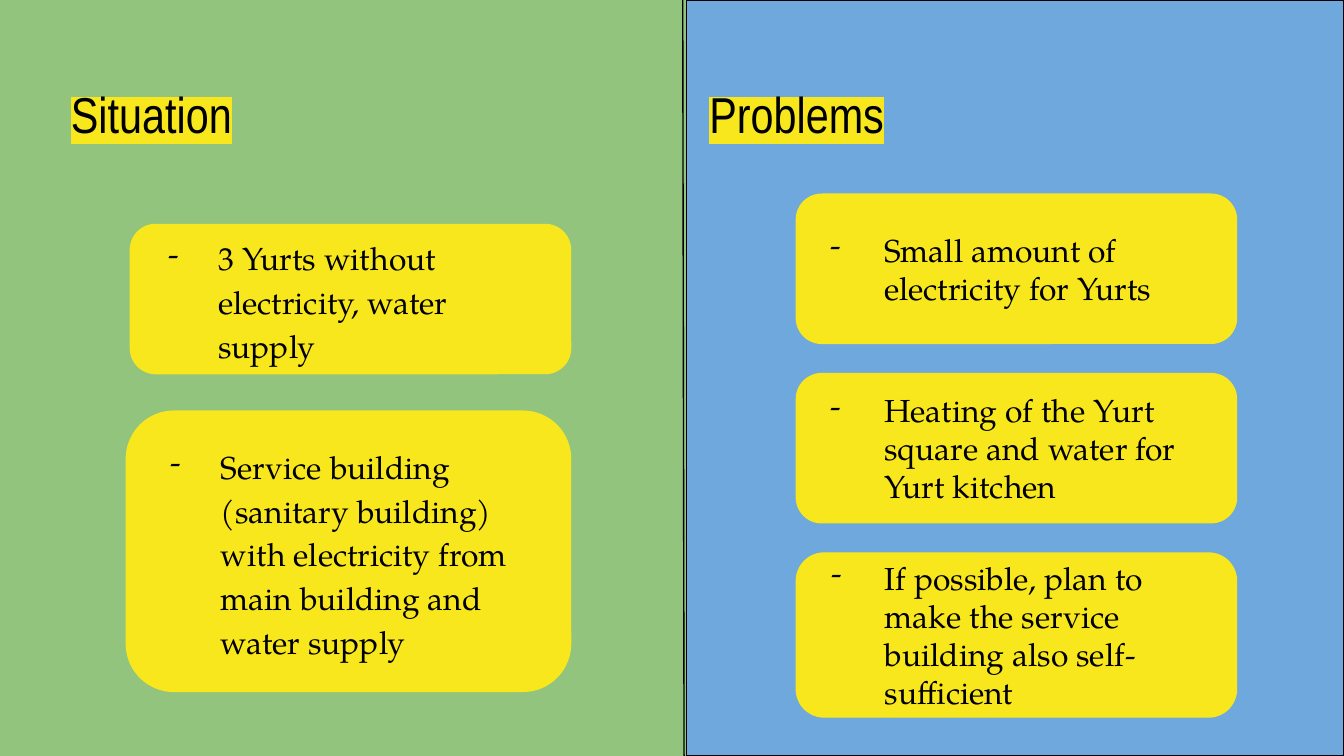
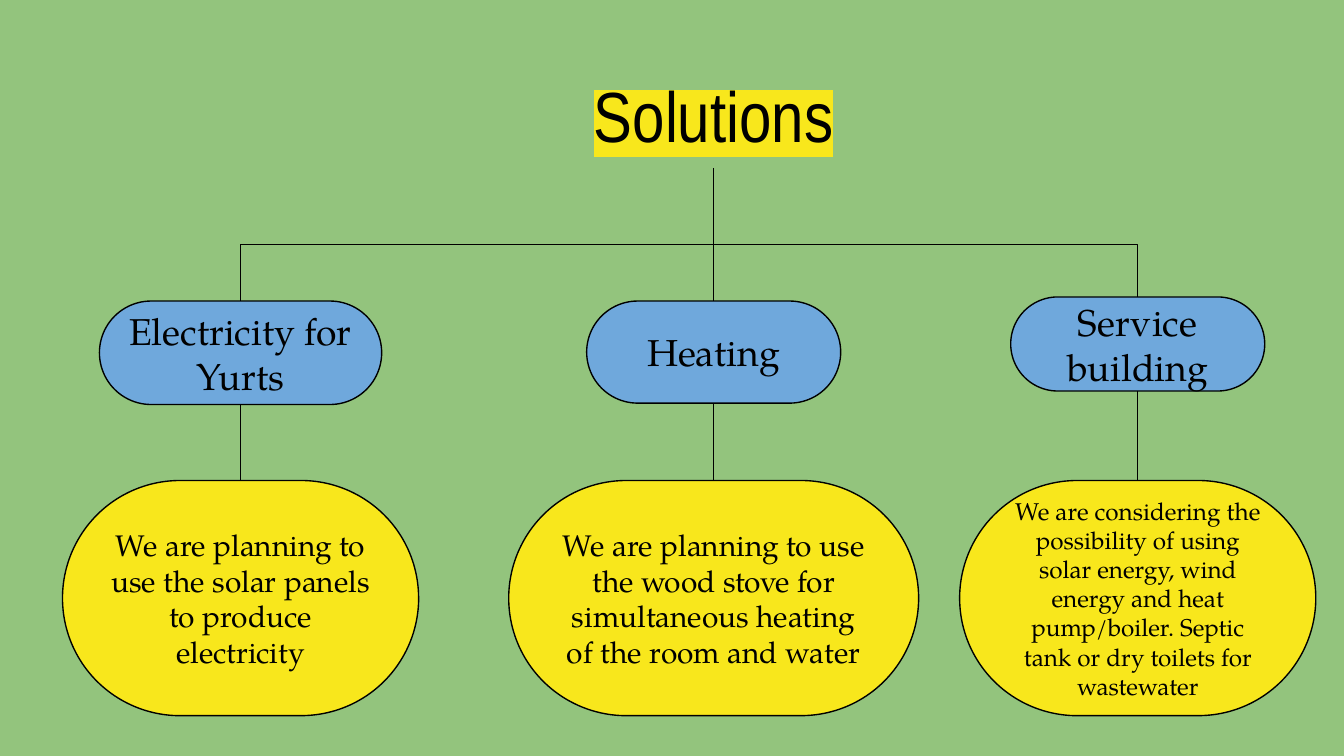
from lxml import etree
from pptx import Presentation
from pptx.dml.color import RGBColor
from pptx.enum.shapes import MSO_CONNECTOR, MSO_SHAPE
from pptx.enum.text import MSO_ANCHOR, PP_ALIGN
from pptx.oxml.ns import qn
from pptx.util import Pt

PX = 4572
W, H = 2000, 1125
GREEN = RGBColor(0x93, 0xC4, 0x7D)
BLUE = RGBColor(0x6F, 0xA8, 0xDC)
YELLOW = RGBColor(0xF8, 0xE7, 0x1C)
BLACK = RGBColor(0, 0, 0)
TITLE_FONT, BODY_FONT = "Arial Narrow", "TeX Gyre Pagella"
RECT, ROUND = MSO_SHAPE.RECTANGLE, MSO_SHAPE.ROUNDED_RECTANGLE
STRAIGHT, ELBOW = MSO_CONNECTOR.STRAIGHT, MSO_CONNECTOR.ELBOW
LEFT, CENTER = PP_ALIGN.LEFT, PP_ALIGN.CENTER
TOP, MIDDLE = MSO_ANCHOR.TOP, MSO_ANCHOR.MIDDLE


def emu(*lengths):
    return [n * PX for n in lengths]


def add_slide(prs):
    s = prs.slides.add_slide(prs.slide_layouts[6])
    s.background.fill.solid()
    s.background.fill.fore_color.rgb = GREEN
    return s


def add_text(sp, text, size, font, align, anchor):
    tf = sp.text_frame
    tf.word_wrap = True
    tf.vertical_anchor = anchor
    tf.margin_left = tf.margin_right = tf.margin_top = tf.margin_bottom = 20 * PX
    p = tf.paragraphs[0]
    p.alignment = align
    r = p.add_run()
    r.text = text
    r.font.size = Pt(size)
    r.font.color.rgb = BLACK
    r.font.name = font
    return p, r


def add_title(s, box, text, size, align=LEFT):
    sp = s.shapes.add_textbox(*emu(*box))
    p, r = add_text(sp, text, size, TITLE_FONT, align, TOP)
    highlight = etree.Element(qn("a:highlight"))
    etree.SubElement(highlight, qn("a:srgbClr"), val=str(YELLOW))
    r.font._element.find(qn("a:solidFill")).addnext(highlight)


def add_block(s, kind, box, fill, line, radius=None):
    sp = s.shapes.add_shape(kind, *emu(*box))
    sp.shadow.inherit = False
    sp.fill.solid()
    sp.fill.fore_color.rgb = fill
    sp.line.color.rgb = line
    sp.line.width = Pt(0.75)
    if radius:
        sp.adjustments[0] = radius
    return sp


def add_line(s, start, end, kind=STRAIGHT):
    c = s.shapes.add_connector(kind, *emu(*start, *end))
    c.line.color.rgb = BLACK
    c.line.width = Pt(0.75)
    spPr = c._element.spPr
    etree.SubElement(spPr, qn("a:effectLst"))
    if kind == ELBOW:
        spPr.find(qn("a:prstGeom")).set("prst", "bentConnector2")
    return c


def add_card(s, box, text, hanging, spacing):
    sp = add_block(s, ROUND, box, YELLOW, YELLOW, 0.17)
    p, r = add_text(sp, text, 17, BODY_FONT, LEFT, MIDDLE)
    p.line_spacing = spacing
    pPr = p._p.get_or_add_pPr()
    pPr.set("marL", str(100 * PX))
    pPr.set("indent", str(-hanging * PX))
    color = etree.SubElement(pPr, qn("a:buClr"))
    etree.SubElement(color, qn("a:srgbClr"), val=str(BLACK))
    etree.SubElement(pPr, qn("a:buFont"), typeface=BODY_FONT)
    etree.SubElement(pPr, qn("a:buChar"), char="-")


def add_panel(s, left, title_dx, title, cards, hanging, spacing):
    add_title(s, (left + title_dx, 104, 506, 130), title, 27)
    for dx, y, w, h, text in cards:
        add_card(s, (left + dx, y, w, h), text, hanging, spacing)


def situation_slide(prs):
    s = add_slide(prs)
    middle = 1022
    add_line(s, (1016, 0), (1018, H))
    add_block(s, RECT, (middle, 0, W - middle, H), BLUE, BLACK)
    add_panel(s, 0, 86, "Situation", [
        (194, 334, 655, 222, "3 Yurts without electricity, water supply"),
        (188, 612, 661, 417, "Service building (sanitary building) with "
                             "electricity from main building and water supply"),
    ], 74, 1.15)
    problems = [
        (222, "Small amount of electricity for Yurts"),
        (222, "Heating of the Yurt square and water for Yurt kitchen"),
        (244, "If possible, plan to make the service building also self-sufficient"),
    ]
    cards = [(163, 289 + 267 * i, 655, h, text) for i, (h, text) in enumerate(problems)]
    add_panel(s, middle, 14, "Problems", cards, 80, 1.0)


def add_pill(s, box, fill, text, size):
    sp = add_block(s, ROUND, box, fill, BLACK, 0.5)
    add_text(sp, text, size, BODY_FONT, CENTER, MIDDLE)
    return sp


def add_branch(s, center, root, head, detail):
    y, w, h, name = head
    detail_w, size, text = detail
    root_x, root_y, bus_y = root
    detail_y = 715
    top = add_pill(s, (center - w // 2, y, w, h), BLUE, name, 20)
    bottom = add_pill(s, (center - detail_w // 2, detail_y, detail_w, 350), YELLOW, text, size)
    stem = add_line(s, (center, y + h), (center, detail_y))
    stem.begin_connect(top, 2)
    stem.end_connect(bottom, 0)
    if center == root_x:
        add_line(s, (root_x, root_y), (center, y)).end_connect(top, 0)
    else:
        add_line(s, (root_x, bus_y), (center, y), ELBOW)


def solutions_slide(prs):
    s = add_slide(prs)
    root = (1062, 250, 364)
    add_title(s, (394, 86, 1336, 126), "Solutions", 38, CENTER)
    add_branch(s, 358, root, (448, 420, 154, "Electricity for Yurts"),
               (530, 16, "We are planning to use the solar panels to produce electricity"))
    add_branch(s, 1062, root, (448, 378, 152, "Heating"),
               (610, 16, "We are planning to use the wood stove for simultaneous "
                         "heating of the room and water"))
    add_branch(s, 1693, root, (442, 378, 140, "Service building"),
               (530, 13, "We are considering the possibility of using solar energy, "
                         "wind energy and heat pump/boiler. Septic tank or dry toilets "
                         "for wastewater"))


def main():
    prs = Presentation()
    prs.slide_width, prs.slide_height = emu(W, H)
    situation_slide(prs)
    solutions_slide(prs)
    prs.save("out.pptx")


if __name__ == "__main__":
    main()
